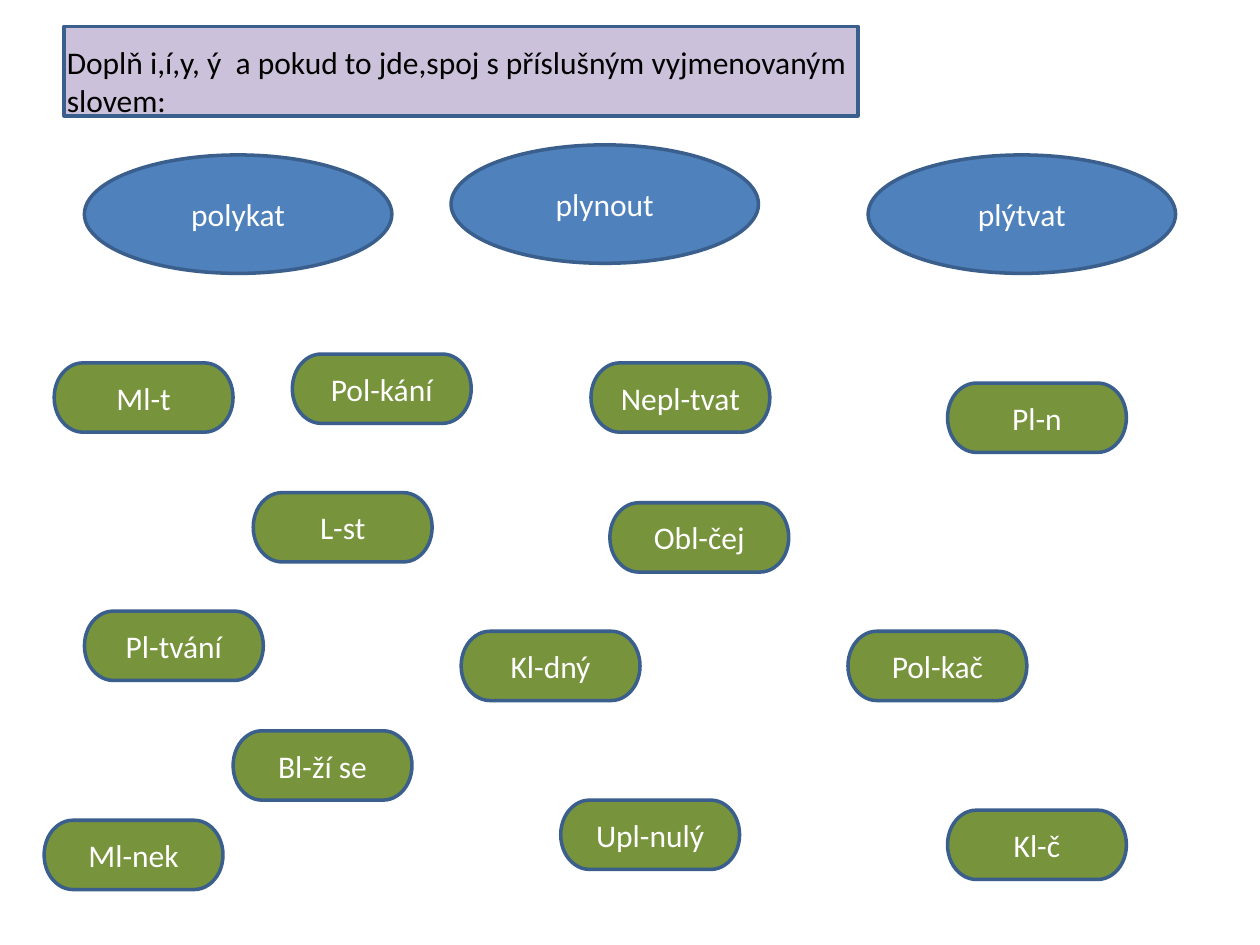
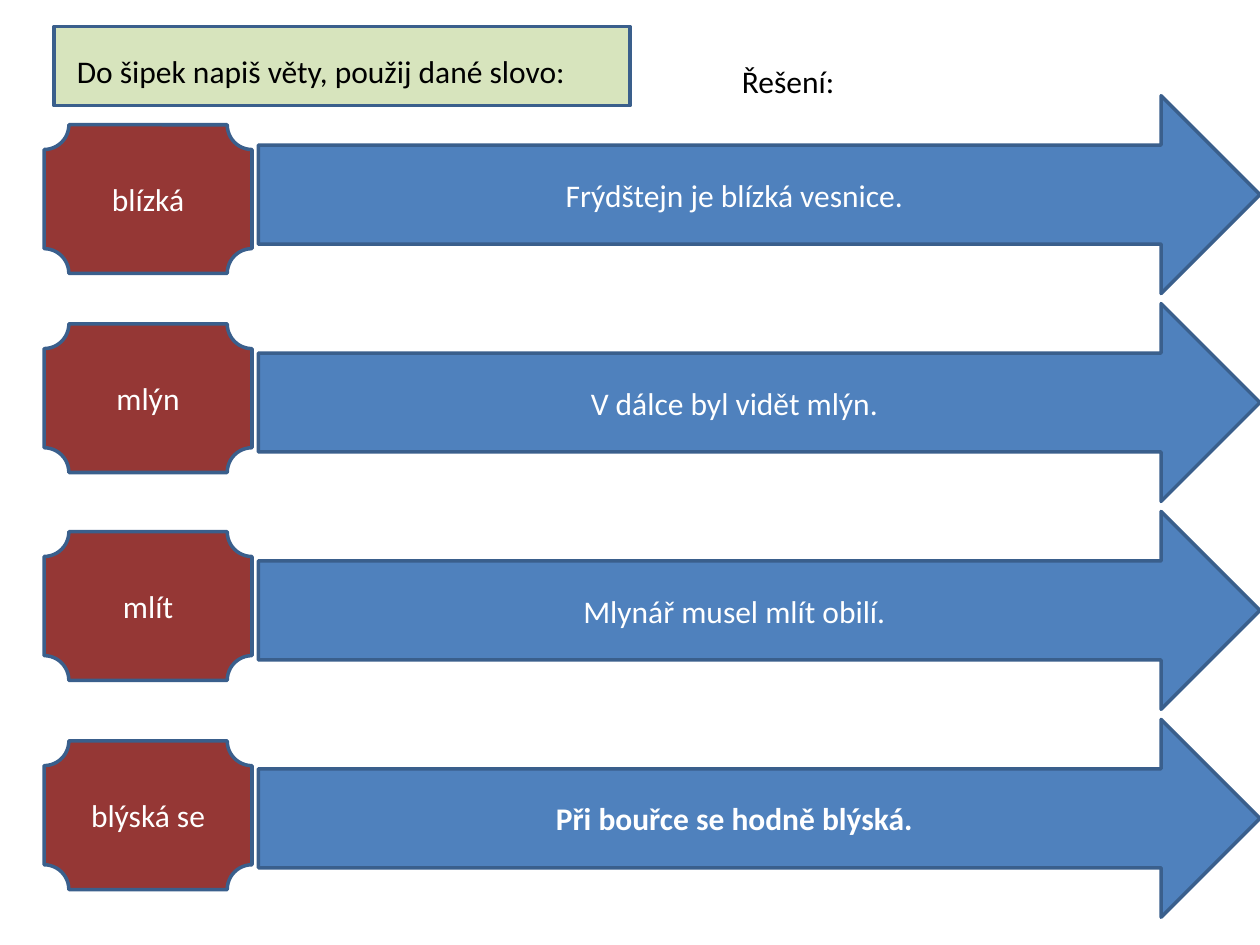
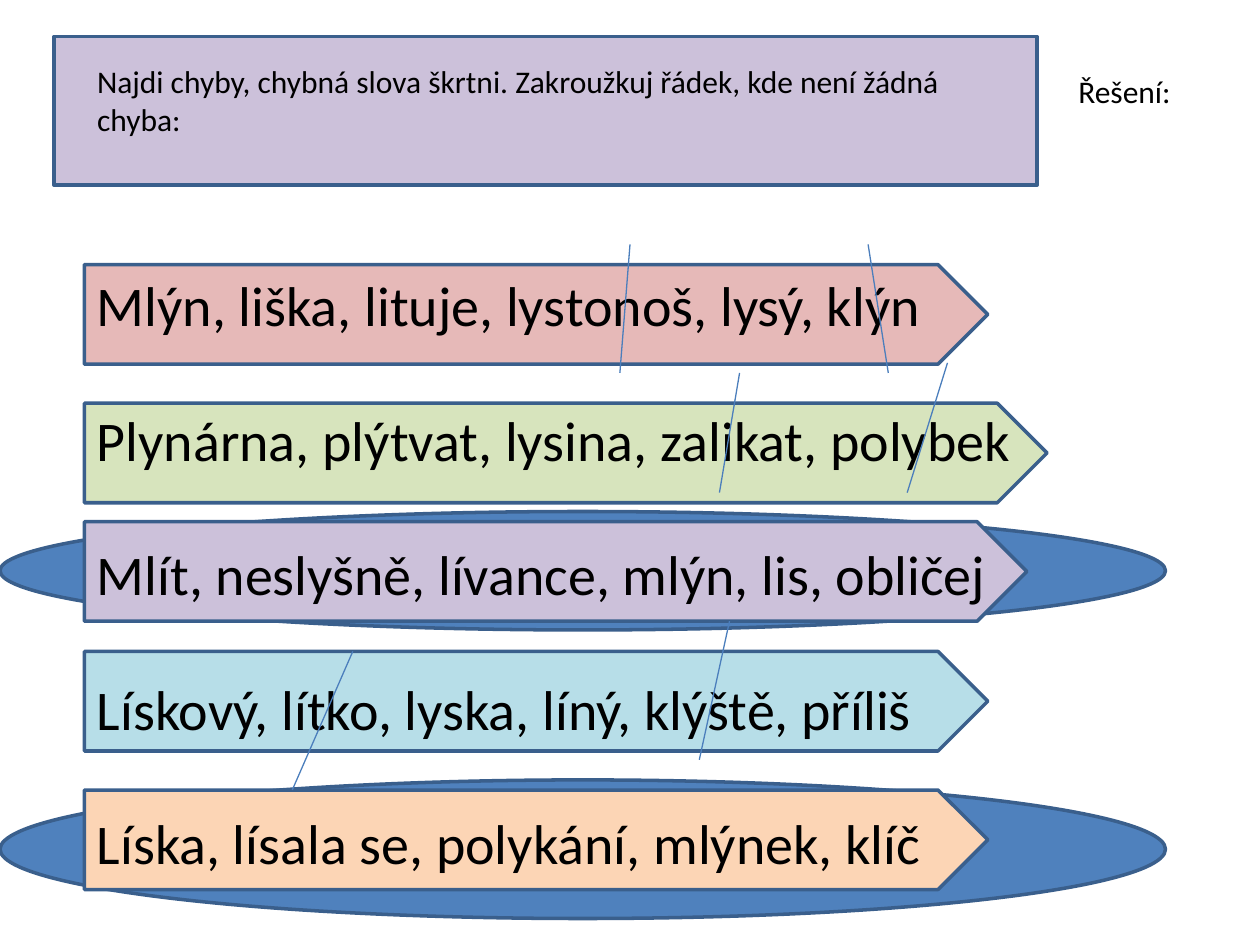
import pptx
import pptx.util
import pptx.dml.color
import pptx.enum.shapes
import pptx.enum.text
import pptx.oxml.ns
import lxml.etree

Inches = pptx.util.Inches
SHAPE = pptx.enum.shapes.MSO_SHAPE
ANCHOR = pptx.enum.text.MSO_ANCHOR
ALIGN = pptx.enum.text.PP_ALIGN

# Shared look
FONT = "Calibri"
BLUE, OUTLINE, STRIKE = "4F81BD", "3A5F8C", "4B7EBC"
GREEN, RED = "77933C", "953735"
LILAC, LIME, PINK, AQUA, PEACH = "CCC1DA", "D7E4BD", "E6B9B8", "B7DEE8", "FCD5B5"
WHITE, BLACK = "FFFFFF", "000000"

# Headings: text, text box, frame box, frame colour
HEADINGS = [
    ("Doplň i,í,y, ý  a pokud to jde,spoj s příslušným vyjmenovaným slovem:",
     (0.43, 0.29, 7.01, 0.71), (0.51, 0.21, 6.3, 0.71), LILAC),
    ("Do šipek napiš věty, použij dané slovo:",
     (0.51, 0.36, 5.83, 0.4), (0.43, 0.21, 4.57, 0.63), LIME),
    ("Najdi chyby, chybná slova škrtni. Zakroužkuj řádek, kde není žádná chyba:",
     (0.67, 0.44, 7.01, 0.71), (0.43, 0.29, 7.8, 1.18), LILAC),
]
SOLUTION = "Řešení:"

# Slide 1: text, left, top
LISTED_WORDS = [("polykat", 0.67, 1.23), ("plynout", 3.58, 1.15), ("plýtvat", 6.89, 1.23)]
GAP_WORDS = [
    ("L-st", 2.01, 3.91), ("Ml-t", 0.43, 2.88), ("Ml-nek", 0.35, 6.51),
    ("Pol-kání", 2.32, 2.81), ("Pl-tvání", 0.67, 4.85), ("Kl-dný", 3.66, 5.01),
    ("Bl-ží se", 1.85, 5.8), ("Obl-čej", 4.84, 3.99), ("Kl-č", 7.52, 6.43),
    ("Upl-nulý", 4.45, 6.35), ("Nepl-tvat", 4.69, 2.88), ("Pol-kač", 6.73, 5.01),
    ("Pl-n", 7.52, 3.04),
]

# Slide 2: word, top of its plaque, sentence, bold
SENTENCES = [
    ("blízká", 0.99, "Frýdštejn je blízká vesnice.", False),
    ("mlýn", 2.57, "V dálce byl vidět mlýn.", False),
    ("mlít", 4.22, "Mlynář musel mlít obilí.", False),
    ("blýská se", 5.88, "Při bouřce se hodně blýská.", True),
]
ARROW_TOP, ARROW_PITCH = 0.76, 1.65

# Slide 3: words, top and width of the band, colour
WORD_ROWS = [
    ("Mlýn, liška, lituje, lystonoš, lysý, klýn", 2.1, 7.17, PINK),
    ("Plynárna, plýtvat, lysina, zalikat, polybek", 3.2, 7.64, LIME),
    ("Mlít, neslyšně, lívance, mlýn, lis, obličej", 4.14, 7.48, LILAC),
    ("Lískový, lítko, lyska, líný, klýště, příliš", 5.17, 7.17, AQUA),
    ("Líska, lísala se, polykání, mlýnek, klíč", 6.27, 7.17, PEACH),
]
CIRCLED_ROWS = [(0, 6.19, 9.25, 1.1), (0, 4.06, 9.25, 0.94)]
STRIKES = [
    (5, 1.94, 4.92, 2.96), (6.89, 1.94, 7.05, 2.96), (5.87, 2.96, 5.71, 3.91),
    (7.52, 2.88, 7.2, 3.91), (5.79, 4.93, 5.55, 6.03), (2.8, 5.17, 2.32, 6.27),
]


def rgb(colour):
    return pptx.dml.color.RGBColor.from_string(colour)


def inches(values):
    return [Inches(value) for value in values]


def apply(target, formats):
    for name, value in formats.items():
        setattr(target, name, value)


def write(frame, lines, colour=BLACK, size=18, bold=False,
          align=ALIGN.LEFT, anchor=ANCHOR.TOP, gap=0):
    apply(frame, {"word_wrap": True, "vertical_anchor": anchor,
                  "auto_size": pptx.enum.text.MSO_AUTO_SIZE.NONE})
    for number, line in enumerate(lines):
        paragraph = frame.add_paragraph() if number else frame.paragraphs[0]
        apply(paragraph, {"alignment": align,
                          "space_before": pptx.util.Pt(gap if number else 0)})
        run = paragraph.add_run()
        run.text = line
        apply(run.font, {"name": FONT, "size": pptx.util.Pt(size), "bold": bold})
        run.font.color.rgb = rgb(colour)


def add_figure(slide, preset, box, fill, text=None, bold=False):
    figure = slide.shapes.add_shape(preset, *inches(box))
    figure.shadow.inherit = False
    figure.fill.solid()
    figure.fill.fore_color.rgb = rgb(fill)
    figure.line.color.rgb = rgb(OUTLINE)
    figure.line.width = pptx.util.Pt(2)
    if text:
        write(figure.text_frame, [text], WHITE, bold=bold,
              align=ALIGN.CENTER, anchor=ANCHOR.MIDDLE)
    return figure


def add_text(slide, box, lines, **formats):
    write(slide.shapes.add_textbox(*inches(box)).text_frame, lines, **formats)


def add_strike(slide, ends):
    strike = slide.shapes.add_connector(
        pptx.enum.shapes.MSO_CONNECTOR.STRAIGHT, *inches(ends))
    strike.line.color.rgb = rgb(STRIKE)
    strike.line.width = pptx.util.Pt(0.75)
    lxml.etree.SubElement(strike._element.spPr, pptx.oxml.ns.qn("a:effectLst"))


def add_headed_slide(deck, text, text_box, frame_box, fill):
    slide = deck.slides.add_slide(deck.slide_layouts[5])
    heading = slide.shapes.title
    apply(heading, dict(zip(("left", "top", "width", "height"), inches(text_box))))
    write(heading.text_frame, [text])
    # The frame goes behind the heading
    frame = add_figure(slide, SHAPE.RECTANGLE, frame_box, fill)
    heading._element.addprevious(frame._element)
    return slide


def main():
    deck = pptx.Presentation()
    apply(deck, {"slide_width": Inches(10), "slide_height": Inches(7.5)})
    matching, sentences, mistakes = [add_headed_slide(deck, *heading) for heading in HEADINGS]

    # Slide 1: words to match
    for word, left, top in LISTED_WORDS:
        add_figure(matching, SHAPE.OVAL, (left, top, 2.44, 0.94), BLUE, word)
    for word, left, top in GAP_WORDS:
        add_figure(matching, SHAPE.FLOWCHART_TERMINATOR, (left, top, 1.42, 0.55), GREEN, word)

    # Slide 2: words and their sentences
    for row, (word, plaque_top, sentence, bold) in enumerate(SENTENCES):
        add_figure(sentences, SHAPE.RIGHT_ARROW,
                   (2.05, ARROW_TOP + row * ARROW_PITCH, 7.95, 1.57), BLUE, sentence, bold)
        add_figure(sentences, SHAPE.PLAQUE, (0.35, plaque_top, 1.65, 1.18), RED, word)
    add_text(sentences, (5.79, 0.44, 1.81, 0.4), [SOLUTION])

    # Slide 3: rows of words, circled or struck out
    for box in CIRCLED_ROWS:
        add_figure(mistakes, SHAPE.OVAL, box, BLUE)
    for _, top, width, fill in WORD_ROWS:
        add_figure(mistakes, SHAPE.PENTAGON, (0.67, top, width, 0.79), fill)
    add_text(mistakes, (0.67, 2.1, 7.8, 4.95), [row[0] for row in WORD_ROWS],
             size=32, gap=38.4)
    add_text(mistakes, (8.46, 0.52, 1.26, 0.4), [SOLUTION])
    for ends in STRIKES:
        add_strike(mistakes, ends)

    deck.save("out.pptx")


if __name__ == "__main__":
    main()
